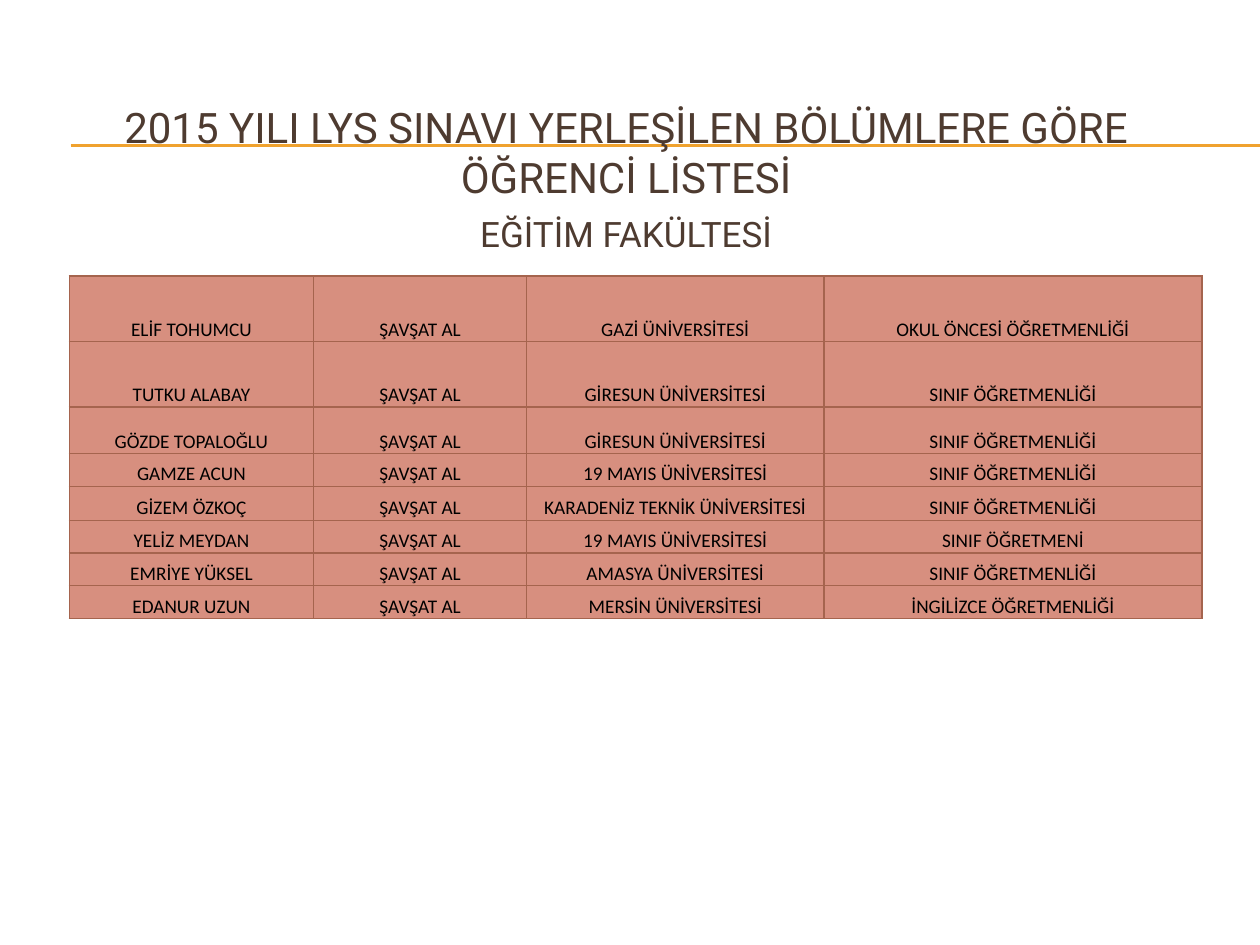
from lxml.etree import SubElement
from pptx import Presentation
from pptx.dml.color import RGBColor
from pptx.enum.shapes import MSO_CONNECTOR
from pptx.enum.text import MSO_ANCHOR, PP_ALIGN
from pptx.oxml import parse_xml
from pptx.oxml.ns import nsdecls, qn
from pptx.util import Inches, Pt

BROWN = RGBColor(0x4E, 0x3B, 0x30)
GOLD = RGBColor(0xF0, 0xA2, 0x2E)
SALMON = RGBColor(0xD7, 0x8F, 0x7F)
RUST = RGBColor(0xA5, 0x64, 0x4E)
BLACK = RGBColor(0, 0, 0)

TITLE = "2015 YILI LYS SINAVI YERLEŞİLEN BÖLÜMLERE GÖRE ÖĞRENCİ LİSTESİ"
FACULTY = "EĞİTİM FAKÜLTESİ"
SCHOOL = "ŞAVŞAT AL"
PRIMARY = "SINIF ÖĞRETMENLİĞİ"
# Student, university, department
STUDENTS = [
    ("ELİF TOHUMCU", "GAZİ ÜNİVERSİTESİ", "OKUL ÖNCESİ ÖĞRETMENLİĞİ"),
    ("TUTKU ALABAY", "GİRESUN ÜNİVERSİTESİ", PRIMARY),
    ("GÖZDE TOPALOĞLU", "GİRESUN ÜNİVERSİTESİ", PRIMARY),
    ("GAMZE ACUN", "19 MAYIS ÜNİVERSİTESİ", PRIMARY),
    ("GİZEM ÖZKOÇ", "KARADENİZ TEKNİK ÜNİVERSİTESİ", PRIMARY),
    ("YELİZ MEYDAN", "19 MAYIS ÜNİVERSİTESİ", "SINIF ÖĞRETMENİ"),
    ("EMRİYE YÜKSEL", "AMASYA ÜNİVERSİTESİ", PRIMARY),
    ("EDANUR UZUN", "MERSİN ÜNİVERSİTESİ", "İNGİLİZCE ÖĞRETMENLİĞİ"),
]
COL_WIDTHS = [1.94, 1.69, 2.36, 3]
ROW_HEIGHTS = [0.52, 0.52, 0.37, 0.26, 0.27, 0.26, 0.26, 0.26]


def write(tf, text, font, size, color):
    tf.text = text
    p = tf.paragraphs[0]
    p.alignment = PP_ALIGN.CENTER
    f = p.runs[0].font
    f.name, f.size, f.color.rgb = font, Pt(size), color
    return p


def add_heading(slide, text, top, height, size, anchor):
    tf = slide.shapes.add_textbox(Inches(0.47), Inches(top), Inches(9), Inches(height)).text_frame
    tf.word_wrap = True
    tf.vertical_anchor = anchor
    return write(tf, text, "Roboto", size, BROWN)


def set_borders(cell, color, width):
    tcPr = cell._tc.get_or_add_tcPr()
    for i, side in enumerate(("lnL", "lnR", "lnT", "lnB")):
        tcPr.insert(i, parse_xml(
            f'<a:{side} {nsdecls("a")} w="{Pt(width)}"><a:solidFill>'
            f'<a:srgbClr val="{color}"/></a:solidFill></a:{side}>'))


prs = Presentation()
prs.slide_width, prs.slide_height = Inches(10), Inches(7.5)
s = prs.slides.add_slide(prs.slide_layouts[6])

# Double gold rule
for y in (1.15, 1.16):
    rule = s.shapes.add_connector(MSO_CONNECTOR.STRAIGHT, Inches(0.56), Inches(y), Inches(10), Inches(y))
    rule.line.color.rgb = GOLD
    rule.line.width = Pt(0.75)
    SubElement(rule._element.spPr, qn("a:effectLst"))

# Headings
add_heading(s, TITLE, 0.62, 1.17, 24, MSO_ANCHOR.MIDDLE)
p = add_heading(s, FACULTY, 1.64, 0.5, 20, MSO_ANCHOR.TOP)
p.space_before = Pt(4)

# Student table
table = s.shapes.add_table(len(STUDENTS), len(COL_WIDTHS), Inches(0.55), Inches(2.19),
                           Inches(sum(COL_WIDTHS)), Inches(sum(ROW_HEIGHTS))).table
table.first_row = table.horz_banding = False
for col, width in zip(table.columns, COL_WIDTHS):
    col.width = Inches(width)
for row, height, (student, university, department) in zip(table.rows, ROW_HEIGHTS, STUDENTS):
    row.height = Inches(height)
    for cell, text in zip(row.cells, (student, SCHOOL, university, department)):
        cell.margin_left = cell.margin_right = Inches(0.05)
        cell.margin_top = cell.margin_bottom = 0
        cell.vertical_anchor = MSO_ANCHOR.BOTTOM
        cell.fill.solid()
        cell.fill.fore_color.rgb = SALMON
        set_borders(cell, RUST, 0.79)
        write(cell.text_frame, text, "Calibri", 11, BLACK).line_spacing = 1.15

prs.save("out.pptx")
